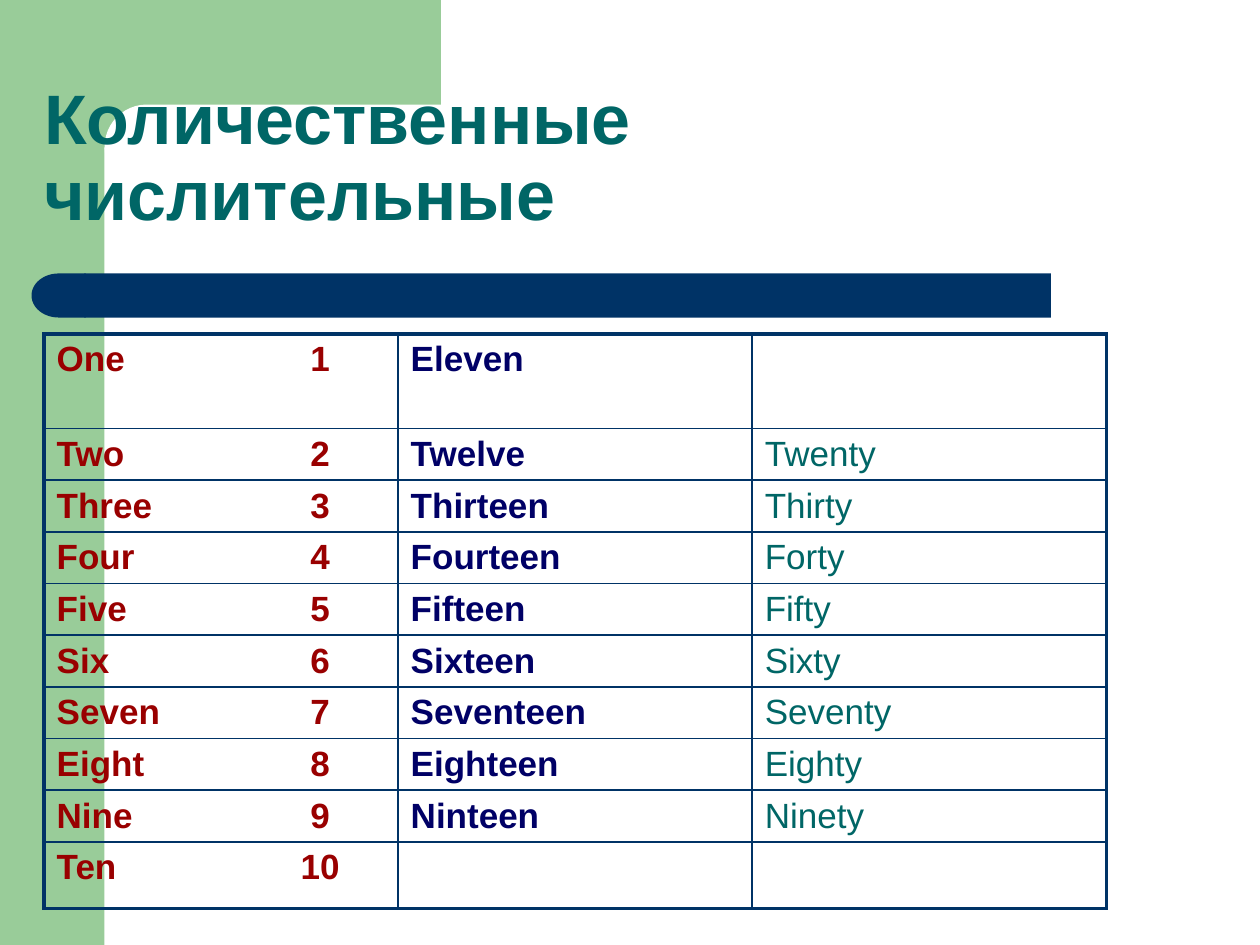
import pptx
import pptx.util
import pptx.dml.color
import pptx.enum.shapes
import pptx.enum.text
import pptx.oxml.ns
from lxml import etree

Inches, Pt = pptx.util.Inches, pptx.util.Pt
qn = pptx.oxml.ns.qn
SHAPES = pptx.enum.shapes.MSO_SHAPE
COLORS = {"green": "99CC99", "white": "FFFFFF", "navy": "003366",
          "teal": "006666", "red": "990000", "blue": "000066"}
THIN, THICK = 1, 2.25
UNITS = ["One", "Two", "Three", "Four", "Five", "Six", "Seven", "Eight", "Nine", "Ten"]
TEENS = ["Eleven", "Twelve", "Thirteen", "Fourteen", "Fifteen", "Sixteen",
         "Seventeen", "Eighteen", "Ninteen", ""]
TENS = ["", "Twenty", "Thirty", "Forty", "Fifty", "Sixty", "Seventy", "Eighty", "Ninety", ""]


def rgb(name):
    return pptx.dml.color.RGBColor.from_string(COLORS[name])


def write(frame, text, size=20, color="teal", bold=True, spacing=None):
    para = frame.paragraphs[0]
    para.alignment = pptx.enum.text.PP_ALIGN.LEFT
    para.line_spacing = spacing
    span = para.add_run()
    span.text = text
    span.font.name = "Arial"
    span.font.size = Pt(size)
    span.font.bold = bold
    span.font.color.rgb = rgb(color)
    return para


def add_center_tab(para, position):
    stops = etree.SubElement(para._p.get_or_add_pPr(), qn("a:tabLst"))
    etree.SubElement(stops, qn("a:tab"), pos=str(position), algn="ctr")


def set_borders(cell, widths):
    """Draw navy cell edges; widths are points for left, right, top, bottom."""
    properties = cell._tc.get_or_add_tcPr()
    for side, width in zip("LRTB", widths):
        line = etree.SubElement(properties, qn(f"a:ln{side}"), w=str(Pt(width)))
        fill = etree.SubElement(line, qn("a:solidFill"))
        etree.SubElement(fill, qn("a:srgbClr"), val=COLORS["navy"])


class Slide:
    def __init__(self, deck):
        self.page = deck.slides.add_slide(deck.slide_layouts[5])

    def shape(self, kind, left, top, width, height, color, rounding=None, rotation=0):
        box = self.page.shapes.add_shape(
            kind, Inches(left), Inches(top), Inches(width), Inches(height))
        box.shadow.inherit = False
        box.fill.solid()
        box.fill.fore_color.rgb = rgb(color)
        box.line.fill.background()
        box.rotation = rotation
        if rounding is not None:
            box.adjustments[0] = rounding

    def title(self, text, left, top, width, height):
        box = self.page.shapes.title
        box.left, box.top = Inches(left), Inches(top)
        box.width, box.height = Inches(width), Inches(height)
        # The title stands in front of the decoration.
        box.element.getparent().append(box.element)
        frame = box.text_frame
        frame.word_wrap = True
        frame.auto_size = pptx.enum.text.MSO_AUTO_SIZE.NONE
        frame.vertical_anchor = pptx.enum.text.MSO_ANCHOR.BOTTOM
        write(frame, text, size=40, spacing=0.9)

    def table(self, columns, left, top, column_width, heights):
        """Each column is a tuple of its texts and their format."""
        row_count, column_count = len(heights), len(columns)
        table = self.page.shapes.add_table(
            row_count, column_count, Inches(left), Inches(top),
            Inches(column_width * column_count), Inches(sum(heights))).table
        table.first_row = table.horz_banding = False
        for row, height in zip(table.rows, heights):
            row.height = Inches(height)
        for x, (texts, style) in enumerate(columns):
            table.columns[x].width = Inches(column_width)
            for y, text in enumerate(texts):
                cell = table.cell(y, x)
                outer = (x == 0, x == column_count - 1, y == 0, y == row_count - 1)
                set_borders(cell, [THICK if edge else THIN for edge in outer])
                cell.fill.background()
                if text:
                    para = write(cell.text_frame, text, **style)
                    if "\t" in text:
                        add_center_tab(para, Inches(2.09))


def main():
    deck = pptx.Presentation()
    deck.slide_width, deck.slide_height = Inches(10), Inches(7.5)
    slide = Slide(deck)
    slide.shape(SHAPES.RECTANGLE, 0, 0, 0.83, 7.5, "green")
    slide.shape(SHAPES.RECTANGLE, 0.75, 0, 2.75, 1.17, "green")
    slide.shape(SHAPES.ROUNDED_RECTANGLE, 0.83, 0.83, 5.58, 0.67, "white", rounding=0.5)
    slide.shape(SHAPES.ROUNDED_RECTANGLE, 0.67, 2.17, 7.67, 0.35, "navy", rounding=0)
    slide.shape(SHAPES.FLOWCHART_DELAY, 0.25, 2.17, 0.43, 0.35, "navy", rotation=180)
    slide.title("Количественные числительные", 0.25, 0.22, 8.17, 1.7)
    numbered = [f"{word}\t{number}" for number, word in enumerate(UNITS, 1)]
    slide.table([(numbered, {"color": "red"}),
                 (TEENS, {"color": "blue"}),
                 (TENS, {"color": "teal", "bold": False})],
                0.35, 2.65, 2.81, [0.75] + [0.41] * 8 + [0.53])
    deck.save("out.pptx")


if __name__ == "__main__":
    main()
